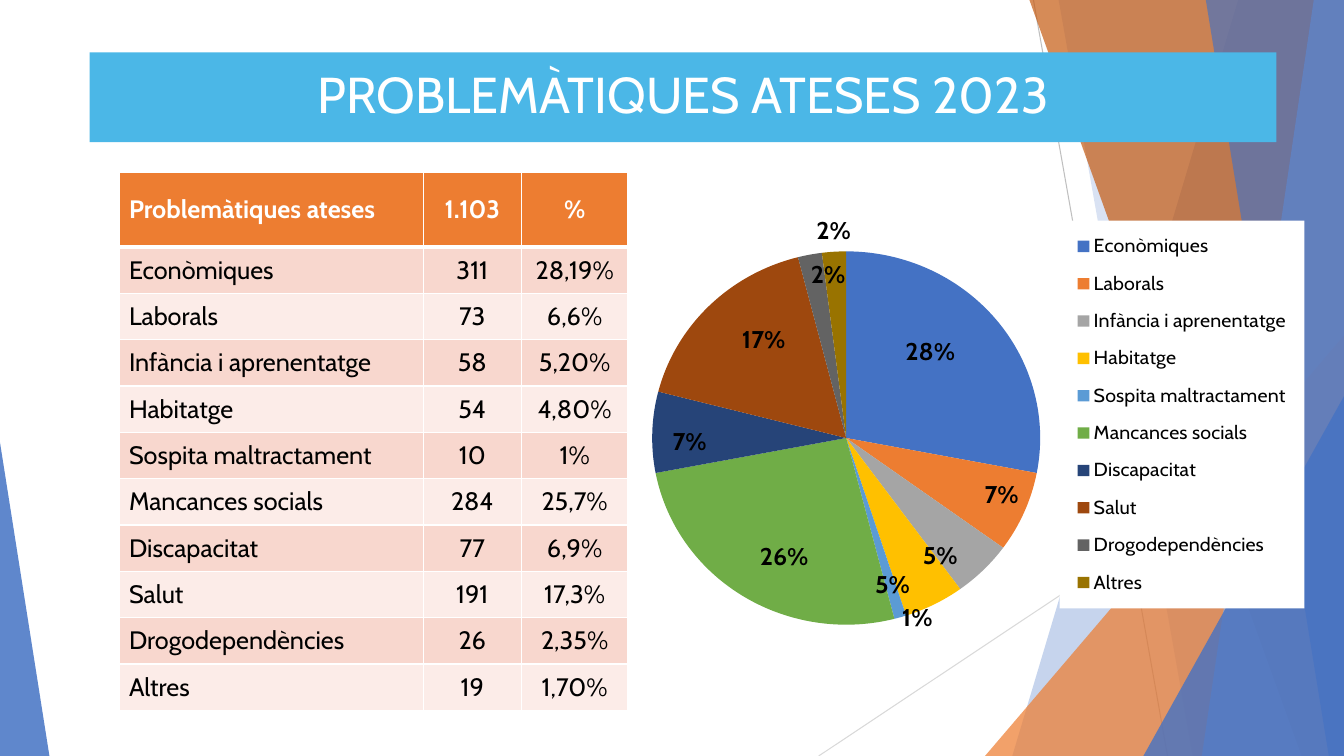
from dataclasses import dataclass

from lxml import etree
from pptx import Presentation, util as u
from pptx.chart.data import CategoryChartData
from pptx.dml.color import RGBColor
from pptx.enum import chart as charts, shapes, text
from pptx.oxml import parse_xml
from pptx.oxml.ns import nsdecls, qn


@dataclass(frozen=True)
class Theme:
    font: str = "Cabin"
    white: str = "FFFFFF"
    black: str = "000000"
    blue: str = "4472C4"
    pale_blue: str = "8FAADC"
    orange: str = "ED7D31"
    rust: str = "C55A11"
    banner: str = "4BB7E7"
    bands: tuple = ("F8D7CE", "FCECE8")
    slices: tuple = ("4472C4", "ED7D31", "A5A5A5", "FFC000", "5B9BD5",
                     "70AD47", "264478", "9E480E", "636363", "997300")
    title_size: int = 36
    body_size: int = 18
    legend_size: int = 14


HEADER = ("Problemàtiques ateses", "1.103", "%")
ISSUES = [
    ("Econòmiques", "311", "28,19%", 28),
    ("Laborals", "73", "6,6%", 7),
    ("Infància i aprenentatge", "58", "5,20%", 5),
    ("Habitatge", "54", "4,80%", 5),
    ("Sospita maltractament", "10", "1%", 1),
    ("Mancances socials", "284", "25,7%", 26),
    ("Discapacitat", "77", "6,9%", 7),
    ("Salut", "191", "17,3%", 17),
    ("Drogodependències", "26", "2,35%", 2),
    ("Altres", "19", "1,70%", 2),
]
LABEL_SHIFTS = {0: (-0.05, 0.03), 2: (-0.03, 0.01), 3: (-0.03, 0), 5: (0.02, -0.04),
                6: (0.02, 0.02), 7: (0.04, 0.03)}
OUTSIDE_LABELS = (4, 9)


class SlideBuilder:
    """Draws styled elements on the current slide."""

    def __init__(self, page, theme):
        self.page = page
        self.theme = theme

    def style_font(self, font, size, color, bold=False):
        font.name = self.theme.font
        font.size = u.Pt(size)
        font.bold = bold
        font.color.rgb = RGBColor.from_string(color)

    def paint(self, shape, color, opacity=100):
        shape.shadow.inherit = False
        shape.line.fill.background()
        shape.fill.solid()
        shape.fill.fore_color.rgb = RGBColor.from_string(color)
        if opacity < 100:
            tone = shape._element.spPr.find(".//" + qn("a:srgbClr"))
            etree.SubElement(tone, qn("a:alpha"), val=str(opacity * 1000))

    def line(self, start, end, color):
        points = [u.Inches(value) for value in (*start, *end)]
        line = self.page.shapes.add_connector(shapes.MSO_CONNECTOR.STRAIGHT, *points)
        line.line.color.rgb = RGBColor.from_string(color)
        line.line.width = u.Pt(0.75)
        etree.SubElement(line._element.spPr, qn("a:effectLst"))

    def polygon(self, points, color, opacity):
        corners = [(u.Inches(x), u.Inches(y)) for x, y in points]
        builder = self.page.shapes.build_freeform(*corners[0])
        builder.add_line_segments(corners[1:], close=True)
        self.paint(builder.convert_to_shape(), color, opacity)

    def triangle(self, bounds, apex, color, opacity):
        shape = self.page.shapes.add_shape(
            shapes.MSO_SHAPE.ISOSCELES_TRIANGLE, *map(u.Inches, bounds))
        shape.adjustments[0] = apex
        self.paint(shape, color, opacity)

    def banner(self, bounds, title):
        box = self.page.shapes.add_shape(shapes.MSO_SHAPE.RECTANGLE, *map(u.Inches, bounds))
        self.paint(box, self.theme.banner)
        box.text_frame.vertical_anchor = text.MSO_ANCHOR.MIDDLE
        box.text_frame.word_wrap = True
        para = box.text_frame.paragraphs[0]
        para.text = title
        para.alignment = text.PP_ALIGN.CENTER
        para.line_spacing = 0.9
        self.style_font(para.font, self.theme.title_size, self.theme.white)

    def cell(self, cell, words, fill, color, bold, centered, bottom):
        cell.vertical_anchor = text.MSO_ANCHOR.MIDDLE
        para = cell.text_frame.paragraphs[0]
        para.text = words
        para.alignment = text.PP_ALIGN.CENTER if centered else text.PP_ALIGN.LEFT
        self.style_font(para.font, self.theme.body_size, color, bold)
        properties = cell._tc.get_or_add_tcPr()
        for side, width in (("L", 1), ("R", 1), ("T", 1), ("B", bottom)):
            border = etree.SubElement(properties, qn("a:ln" + side), w=str(u.Pt(width)))
            paint = etree.SubElement(border, qn("a:solidFill"))
            etree.SubElement(paint, qn("a:srgbClr"), val=self.theme.white)
        cell.fill.solid()
        cell.fill.fore_color.rgb = RGBColor.from_string(fill)

    def table(self, bounds, widths, heights, rows):
        frame = self.page.shapes.add_table(
            len(rows), len(widths), *map(u.Inches, bounds))
        table = frame.table
        for column, width in zip(table.columns, widths):
            column.width = u.Inches(width)
        for index, (row, height, words) in enumerate(zip(table.rows, heights, rows)):
            row.height = u.Inches(height)
            header = index == 0
            fill = self.theme.orange if header else self.theme.bands[(index - 1) % 2]
            color = self.theme.white if header else self.theme.black
            for place, (cell, word) in enumerate(zip(row.cells, words)):
                self.cell(cell, word, fill, color, header, place > 0, 3 if header else 1)

    def layout(self, parent, index, **values):
        for old in parent.findall(qn("c:layout")):
            parent.remove(old)
        layout = etree.Element(qn("c:layout"))
        manual = etree.SubElement(layout, qn("c:manualLayout"))
        for name, value in values.items():
            etree.SubElement(manual, qn("c:" + name), val=str(value))
        parent.insert(index, layout)

    def legend(self, chart):
        chart.has_legend = True
        legend = chart.legend
        legend.position = charts.XL_LEGEND_POSITION.RIGHT
        legend.include_in_layout = False
        self.style_font(legend.font, self.theme.legend_size, self.theme.black)
        element = legend._element
        self.layout(element, 1, xMode="edge", yMode="edge", x=0.64, y=0.16, w=0.34, h=0.79)
        element.find(qn("c:overlay")).addnext(parse_xml(
            f'<c:spPr {nsdecls("c", "a")}><a:solidFill>'
            f'<a:srgbClr val="{self.theme.white}"/></a:solidFill></c:spPr>'))

    def pie(self, bounds, names, values):
        data = CategoryChartData()
        data.categories = names
        data.add_series("Series 1", values)
        chart = self.page.shapes.add_chart(
            charts.XL_CHART_TYPE.PIE, *map(u.Inches, bounds), data).chart
        chart.has_title = False
        self.style_font(chart.font, self.theme.body_size, self.theme.black)
        self.legend(chart)
        plot_area = chart._chartSpace.find(".//" + qn("c:plotArea"))
        self.layout(plot_area, 0, layoutTarget="inner", xMode="edge", yMode="edge",
                    x=0.074, y=0.211, w=0.539, h=0.794)
        plot = chart.plots[0]
        plot.vary_by_categories = True
        series = plot.series[0]
        labels = series.data_labels
        labels.show_percentage = True
        labels.show_value = False
        self.style_font(labels.font, self.theme.body_size, self.theme.black, True)
        for index, color in enumerate(self.theme.slices):
            point = series.points[index]
            point.format.fill.solid()
            point.format.fill.fore_color.rgb = RGBColor.from_string(color)
            self.slice_label(point.data_label, index)
        for leader in labels._element.iter(qn("c:showLeaderLines")):
            leader.set("val", "0")

    def slice_label(self, label, index):
        places = charts.XL_LABEL_POSITION
        label.position = places.OUTSIDE_END if index in OUTSIDE_LABELS else places.INSIDE_END
        self.style_font(label.font, self.theme.body_size, self.theme.black, True)
        element = label._get_or_add_dLbl()
        element.find(qn("c:showVal")).set("val", "0")
        element.find(qn("c:showPercent")).set("val", "1")
        if index in LABEL_SHIFTS:
            x, y = LABEL_SHIFTS[index]
            self.layout(element, 1, x=x, y=y)


def main():
    deck = Presentation()
    deck.slide_width, deck.slide_height = u.Inches(13.33), u.Inches(7.5)
    theme = Theme()
    slide = SlideBuilder(deck.slides.add_slide(deck.slide_layouts[6]), theme)

    slide.line((10.25, 0), (11.58, 7.5), "BFBFBF")
    slide.line((13.33, 4.03), (8.12, 7.5), "D9D9D9")

    def ribbon(top, bottom, color, opacity):
        slide.polygon([(top, 0), (13.33, 0), (13.33, 7.5), (bottom, 7.5)], color, opacity)

    ribbon(12.28, 10.04, theme.blue, 30)
    ribbon(10.5, 11.83, theme.blue, 20)
    slide.triangle((9.77, 3.33, 3.56, 4.17), 1, theme.orange, 72)
    ribbon(10.21, 12.91, theme.rust, 70)
    ribbon(13.03, 11.92, theme.pale_blue, 70)
    ribbon(11.96, 13.18, theme.blue, 65)
    slide.triangle((11.34, 3.93, 1.99, 3.57), 1, theme.blue, 80)
    slide.triangle((0, 4.39, 0.49, 3.11), 0, theme.blue, 85)

    rows = [HEADER] + [issue[:3] for issue in ISSUES]
    slide.table((1.18, 1.71, 5.05, 5.32), (3.02, 0.97, 1.06),
                [0.74] + [0.46] * len(ISSUES), rows)
    slide.banner((0.89, 0.52, 11.77, 0.89), "PROBLEMÀTIQUES ATESES 2023")
    slide.pie((5.94, 1.41, 7.14, 5.06), [issue[0] for issue in ISSUES],
              [issue[3] for issue in ISSUES])
    deck.save("out.pptx")


if __name__ == "__main__":
    main()
